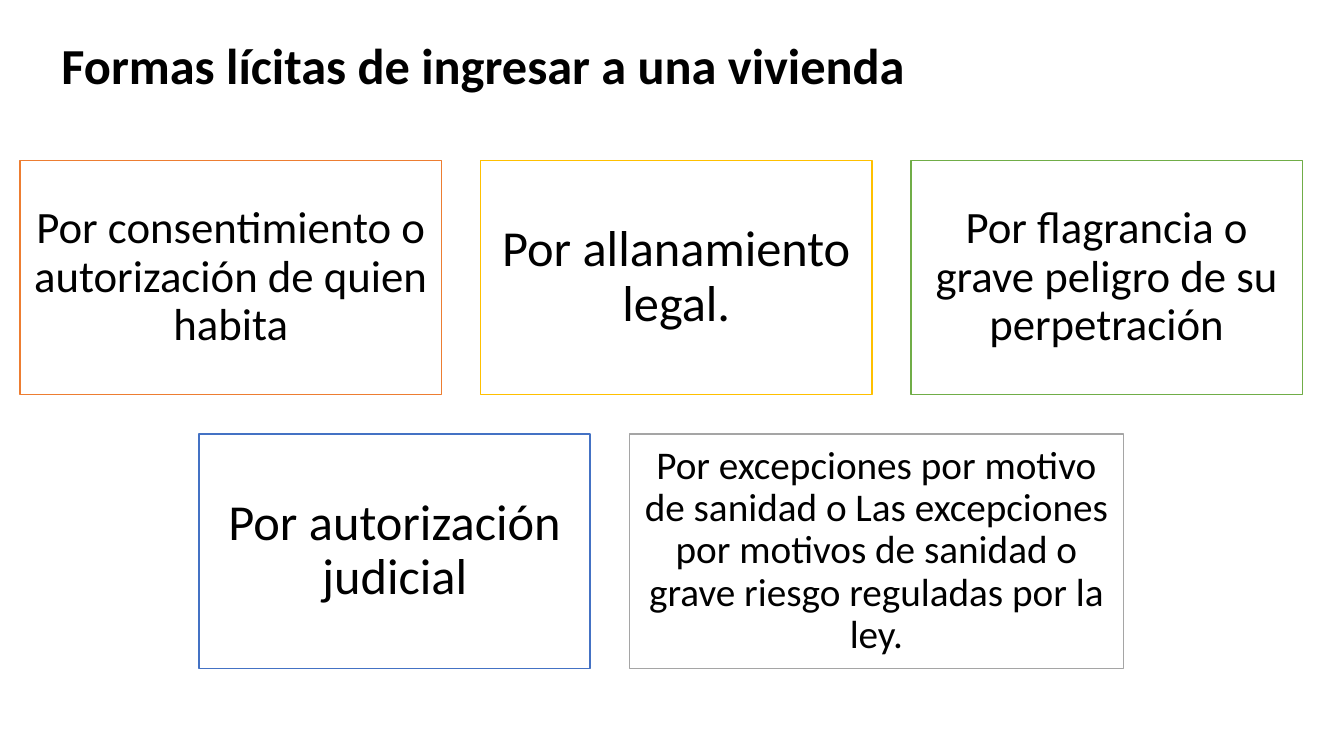
from dataclasses import dataclass

from pptx import Presentation
from pptx.dml.color import RGBColor as Rgb
from pptx.enum import shapes as sh, text as tx
from pptx.util import Pt


@dataclass(frozen=True)
class Theme:
    font: str = "Calibri"
    ink: str = "000000"
    paper: str = "FFFFFF"
    orange: str = "ED7D31"
    gold: str = "FFC000"
    green: str = "70AD47"
    blue: str = "4472C4"
    gray: str = "A5A5A5"
    head: int = 36
    large: int = 36
    mid: int = 32
    small: int = 28


T = Theme()

# Each card: text, width, type size, border colour
ROWS = [
    [
        ("Por consentimiento o autorización de quien habita", 301, T.mid, T.orange),
        ("Por allanamiento legal.", 279.4, T.large, T.gold),
        ("Por flagrancia o grave peligro de su perpetración", 279.4, T.mid, T.green),
    ],
    [
        ("Por autorización judicial", 279.4, T.large, T.blue),
        ("Por excepciones por motivo de sanidad o Las excepciones por motivos "
         "de sanidad o grave riesgo reguladas por la ley.", 352.8, T.small, T.gray),
    ],
]


def write(shape, words, size, bold=False, align=tx.PP_ALIGN.LEFT,
          anchor=tx.MSO_ANCHOR.TOP, pad=(7.2, 3.6), lines=1.0):
    """Fill a shape with one paragraph; pad is (side, top and bottom) in points."""
    frame = shape.text_frame
    frame.word_wrap = True
    frame.auto_size = tx.MSO_AUTO_SIZE.NONE
    frame.vertical_anchor = anchor
    frame.margin_left = frame.margin_right = Pt(pad[0])
    frame.margin_top = frame.margin_bottom = Pt(pad[1])
    para = frame.paragraphs[0]
    para.alignment = align
    para.line_spacing = lines
    run = para.add_run()
    run.text = words
    run.font.name = T.font
    run.font.size = Pt(size)
    run.font.bold = bold
    run.font.color.rgb = Rgb.from_string(T.ink)


def title(slide, box, words):
    shape = slide.shapes.title
    shape.left, shape.top, shape.width, shape.height = map(Pt, box)
    write(shape, words, T.head, bold=True)


def card(slide, box, words, size, color):
    shape = slide.shapes.add_shape(sh.MSO_SHAPE.RECTANGLE, *map(Pt, box))
    shape.shadow.inherit = False
    shape.fill.solid()
    shape.fill.fore_color.rgb = Rgb.from_string(T.paper)
    shape.line.color.rgb = Rgb.from_string(color)
    shape.line.width = Pt(1)
    pad = 0.3 * size
    write(shape, words, size, align=tx.PP_ALIGN.CENTER,
          anchor=tx.MSO_ANCHOR.MIDDLE, pad=(pad, pad), lines=0.9)


def cards(slide, box, rows, gap):
    """Stack rows of cards in the box, each row centred across it."""
    left, top, width, height = box
    tall = (height - gap * (len(rows) - 1)) / len(rows)
    for i, row in enumerate(rows):
        used = sum(wide for _, wide, _, _ in row) + gap * (len(row) - 1)
        x = left + (width - used) / 2
        y = top + i * (tall + gap)
        for words, wide, size, color in row:
            card(slide, (x, y, wide, tall), words, size, color)
            x += wide + gap


def main():
    deck = Presentation()
    deck.slide_width, deck.slide_height = Pt(960), Pt(540)
    slide = deck.slides.add_slide(deck.slide_layouts.get_by_name("Title Only"))
    cards(slide, (14.4, 114.5, 915.8, 363), ROWS, gap=28)
    title(slide, (36.7, 20.9, 629.3, 51), "Formas lícitas de ingresar a una vivienda")
    deck.save("out.pptx")


if __name__ == "__main__":
    main()
